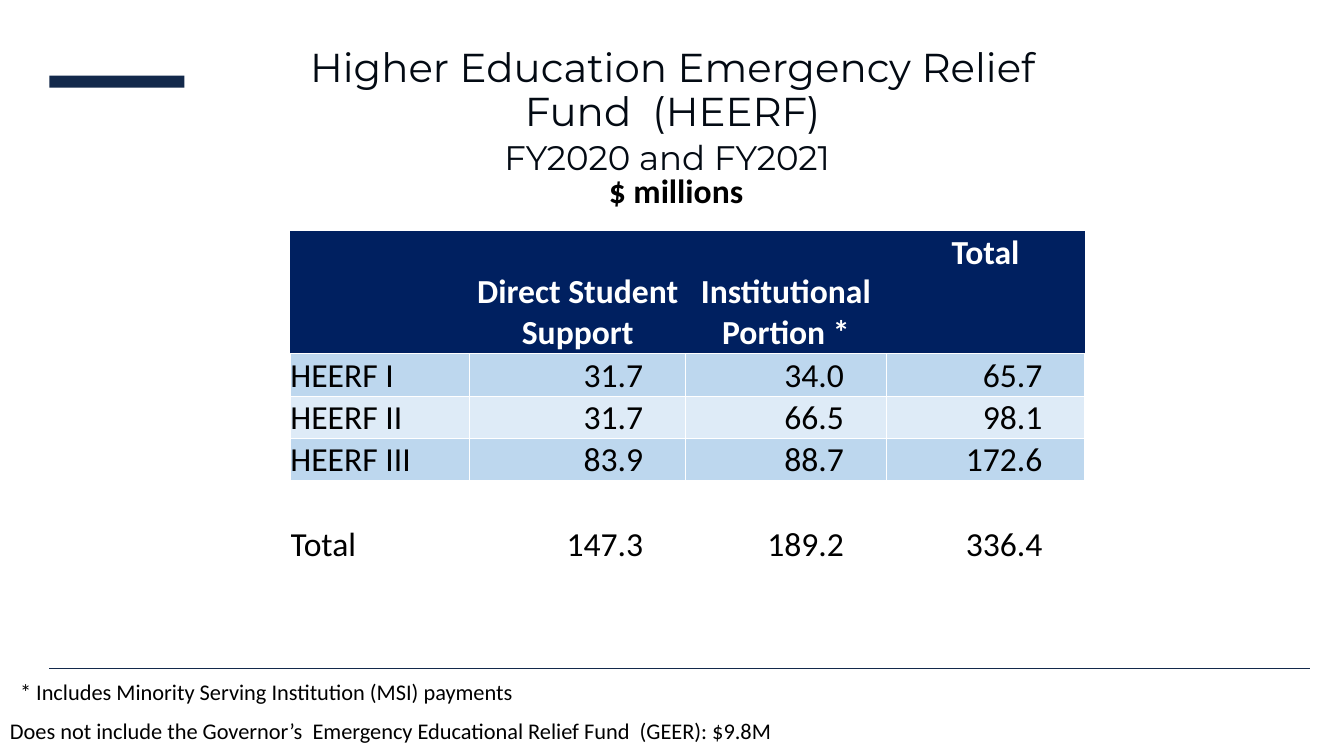
from lxml import etree
from pptx import Presentation
from pptx.dml.color import RGBColor
from pptx.enum import shapes, text
from pptx.oxml.ns import qn
from pptx.util import Inches, Pt

NAVY = RGBColor(0x13, 0x29, 0x4B)
HEAD = RGBColor(0x00, 0x20, 0x60)
BLUE = RGBColor(0xBD, 0xD7, 0xEE)
PALE = RGBColor(0xDE, 0xEB, 0xF7)
INK = RGBColor(0x03, 0x0A, 0x13)
BLACK = RGBColor(0, 0, 0)
WHITE = RGBColor(0xFF, 0xFF, 0xFF)

LEFT, MID, RIGHT = (text.PP_ALIGN.LEFT, text.PP_ALIGN.CENTER,
                    text.PP_ALIGN.RIGHT)
WIDTHS = [1.78, 2.14, 1.99, 1.97]
HEIGHTS = [0.42, 0.79] + [0.42] * 5
HEADS = ["", "Direct Student Support", "Institutional Portion *", "Total"]
BODY = [
    (BLUE, ["HEERF I", "31.7", "34.0", "65.7"]),
    (PALE, ["HEERF II", "31.7", "66.5", "98.1"]),
    (BLUE, ["HEERF III", "83.9", "88.7", "172.6"]),
    (None, [""] * 4),
    (None, ["Total", "147.3", "189.2", "336.4"]),
]


def style(font, size, color=BLACK, bold=False, name="Calibri"):
    font.color.rgb = color
    for key, val in {"size": Pt(size), "bold": bold, "name": name}.items():
        setattr(font, key, val)


def label(slide, box, words, size, bold=False):
    frame = slide.shapes.add_textbox(*map(Inches, box)).text_frame
    frame.word_wrap = True
    run = frame.paragraphs[0].add_run()
    run.text = words
    style(run.font, size, bold=bold)


def frame_marks(slide, left, top, width):
    # Accent bar
    bar = slide.shapes.add_shape(
        shapes.MSO_SHAPE.RECTANGLE, Inches(left), Inches(top),
        Inches(1.34), Inches(0.12))
    bar.shadow.inherit = False
    bar.fill.solid()
    bar.fill.fore_color.rgb = NAVY
    bar.line.fill.background()
    # Footer rule
    low = Inches(top + 5.88)
    rule = slide.shapes.add_connector(
        shapes.MSO_CONNECTOR.STRAIGHT, Inches(left), low,
        Inches(left + width), low)
    rule.line.color.rgb = NAVY
    rule.line.width = Pt(0.5)
    etree.SubElement(rule.element.spPr, qn("a:effectLst"))


def title(slide, box):
    frame = slide.shapes.add_textbox(*map(Inches, box)).text_frame
    frame.word_wrap = True
    frame.vertical_anchor = text.MSO_ANCHOR.MIDDLE
    para = frame.paragraphs[0]
    para.alignment, para.line_spacing = MID, 0.9
    for words, size in [
            ("Higher Education Emergency Relief Fund  (HEERF)\v", 28.8),
            ("FY2020 and FY2021", 24.3), (" ", 28.8)]:
        for i, part in enumerate(words.split("\v")):
            if i:
                para.add_line_break()
            if part:
                run = para.add_run()
                run.text = part
                style(run.font, size, INK, name="Montserrat")


def edges(cell, color):
    props = cell._tc.get_or_add_tcPr()
    for i, side in enumerate("LRTB"):
        line = etree.Element(qn("a:ln" + side), w=str(Pt(1)))
        if color is None:
            etree.SubElement(line, qn("a:noFill"))
        else:
            fill = etree.SubElement(line, qn("a:solidFill"))
            etree.SubElement(fill, qn("a:srgbClr"), val=str(color))
        props.insert(i, line)


def fill_cell(cell, words, fill, align, head=False):
    if fill is None:
        cell.fill.background()
    else:
        cell.fill.solid()
        cell.fill.fore_color.rgb = fill
    edges(cell, None if head else WHITE)
    pad = Inches(0.42) if align == RIGHT else 0
    for key, val in {"margin_left": 0, "margin_right": pad, "margin_top": 0,
                     "margin_bottom": 0,
                     "vertical_anchor": text.MSO_ANCHOR.BOTTOM}.items():
        setattr(cell, key, val)
    para = cell.text_frame.paragraphs[0]
    para.alignment = align
    if words:
        run = para.add_run()
        run.text = words
        style(run.font, 24, WHITE if head else BLACK, head)


def fund_table(slide, left, top):
    box = map(Inches, (left, top, sum(WIDTHS), sum(HEIGHTS)))
    grid = slide.shapes.add_table(len(HEIGHTS), len(WIDTHS), *box).table
    grid.first_row = grid.horz_banding = False
    for col, size in zip(grid.columns, WIDTHS):
        col.width = Inches(size)
    for row, size in zip(grid.rows, HEIGHTS):
        row.height = Inches(size)
    # Two header rows, the middle columns merged
    for c, words in enumerate(HEADS):
        fill_cell(grid.cell(0, c), words, HEAD, MID, True)
        fill_cell(grid.cell(1, c), "", HEAD, MID, True)
    for c in (1, 2):
        grid.cell(0, c).merge(grid.cell(1, c))
    # Amounts
    for r, (fill, row) in enumerate(BODY, 2):
        for c, words in enumerate(row):
            fill_cell(grid.cell(r, c), words, fill, RIGHT if c else LEFT)


def notes(slide, left, top):
    label(slide, (left + 0.1, top, 8.32, 0.37),
          "* Includes Minority Serving Institution (MSI) payments", 16)
    label(slide, (left, top + 0.39, 8.52, 0.37),
          "Does not include the Governor’s  Emergency Educational Relief "
          "Fund  (GEER): $9.8M", 16)


def main():
    deck = Presentation()
    deck.slide_width, deck.slide_height = Inches(13.33), Inches(7.5)
    slide = deck.slides.add_slide(deck.slide_layouts[6])
    frame_marks(slide, 0.49, 0.75, 12.5)
    title(slide, (2.51, 0.83, 8.32, 0.59))
    fund_table(slide, 2.88, 2.29)
    notes(slide, 0, 6.68)
    label(slide, (5.94, 1.64, 2.16, 0.5), "$ millions", 24, True)
    deck.save("out.pptx")


if __name__ == "__main__":
    main()
